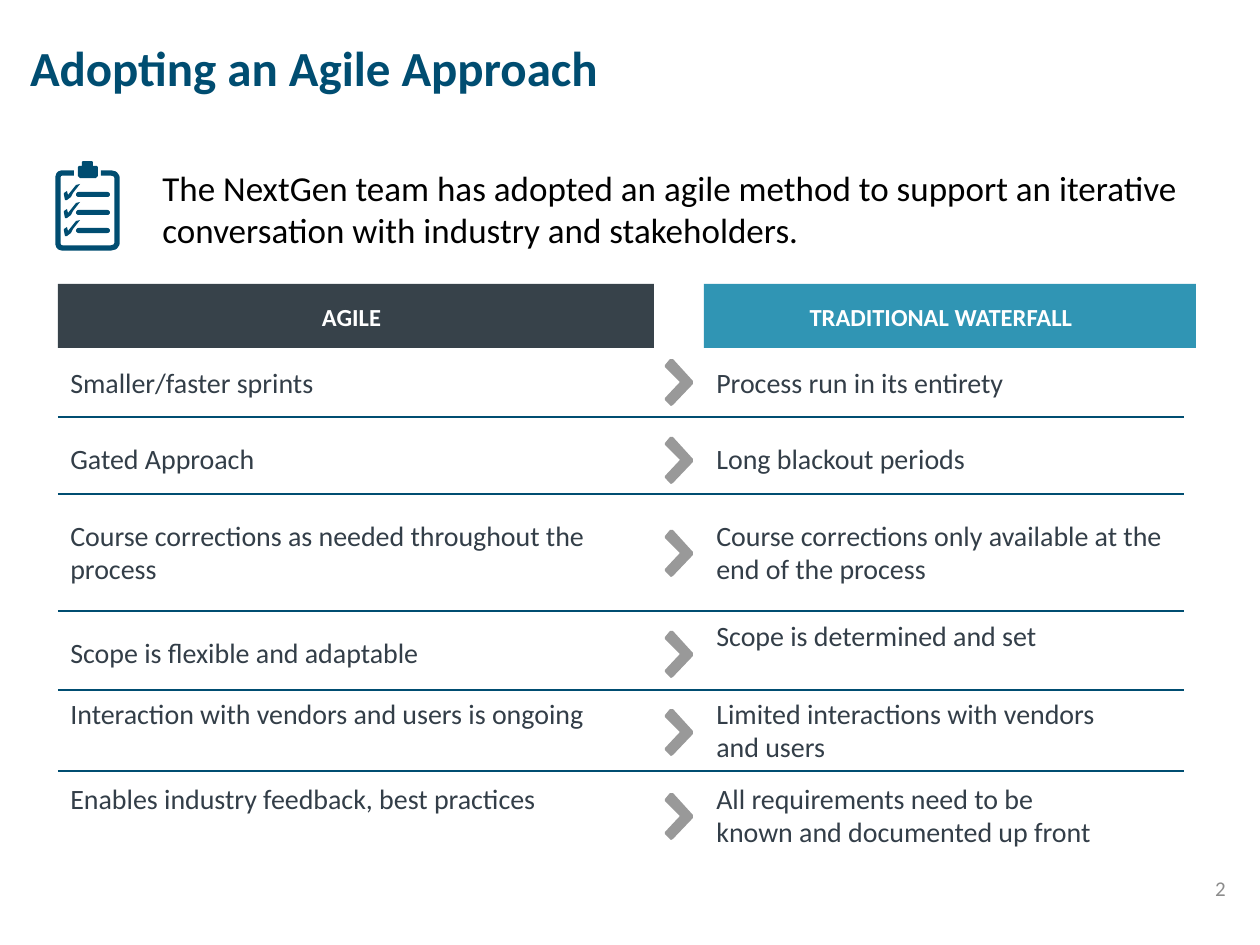
"""Build the slide that sets agile against waterfall."""
import pptx
import pptx.dml.color
import pptx.enum.shapes
import pptx.enum.text
import pptx.oxml.ns
import pptx.util
from lxml import etree

SCALE = 914400 / 126
NAVY, SLATE, TEAL, INK, GREY = "004D71", "37424A", "3095B4", "333E48", "999999"
SHAPE = pptx.enum.shapes.MSO_SHAPE
ALIGN = pptx.enum.text.PP_ALIGN
ANCHOR = pptx.enum.text.MSO_ANCHOR

ROWS = [
    ("Smaller/faster sprints", 359, "Process run in its entirety", 359, 359),
    ("Gated Approach", 435, "Long blackout periods", 435, 437),
    ("Course corrections as needed throughout the process", 512,
     "Course corrections only available at the end of the process", 512, 530),
    ("Scope is flexible and adaptable", 629, "Scope is determined and set", 612, 631),
    ("Interaction with vendors and users is ongoing", 690,
     "Limited interactions with vendors\vand users", 690, 709),
    ("Enables industry feedback, best practices", 775,
     "All requirements need to be\vknown and documented up front", 775, 793),
]
RULES = [417, 494, 611, 690, 771]
ARROW = [(7, 47), (1, 41), (1, 39), (16, 23), (1, 8), (1, 6), (6, 0),
         (9, 0), (29, 22), (29, 25), (9, 46)]
TICK = [(16, 0), (9, 9), (7, 13), (3, 16), (1, 16), (0, 11), (0, 9),
        (3, 7), (4, 11), (8, 6), (12, 1)]
BOARD = [(19, 3), (7, 3), (4, 4), (3, 7), (3, 74), (4, 77), (7, 78),
         (56, 78), (60, 77), (62, 74), (62, 7), (60, 4), (56, 3), (46, 3)]
CLIP = [(0, 6), (1, 5), (4, 5), (4, 1), (5, 0), (14, 0), (15, 1), (15, 5),
        (19, 5), (20, 6), (20, 15), (18, 17), (2, 17), (0, 15)]


def px(num):
    """Turn pixels into EMU."""
    return pptx.util.Emu(round(num * SCALE))


def tint(code):
    """Turn a hex string into a colour."""
    return pptx.dml.color.RGBColor.from_string(code)


def place(shape, left, top, width, height):
    """Set the bounds of a shape."""
    shape.left, shape.top = px(left), px(top)
    shape.width, shape.height = px(width), px(height)


def style(frame, size, color, bold=False, align=ALIGN.LEFT):
    """Format all text in a frame."""
    for para in frame.paragraphs:
        para.alignment = align
        for run in para.runs:
            font = run.font
            font.name, font.size, font.bold = "Calibri", pptx.util.Pt(size), bold
            font.color.rgb = tint(color)


def title(slide, text):
    """Move and format the title."""
    shape = slide.shapes.title
    place(shape, 30, 37, 748, 67)
    frame = shape.text_frame
    frame.text = text
    frame.vertical_anchor = ANCHOR.TOP
    frame.margin_left = frame.margin_right = 0
    frame.margin_top = frame.margin_bottom = 0
    style(frame, 28, NAVY, True)


def label(slide, text, box, size, color, bold=False, align=ALIGN.LEFT):
    """Add a wrapped text box."""
    frame = slide.shapes.add_textbox(*map(px, box)).text_frame
    frame.word_wrap = True
    frame.text = text
    style(frame, size, color, bold, align)
    return frame


def block(slide, kind, box, color):
    """Add a plain filled shape."""
    shape = slide.shapes.add_shape(kind, *map(px, box))
    shape.shadow.inherit = False
    shape.fill.solid()
    shape.fill.fore_color.rgb = tint(color)
    shape.line.fill.background()
    return shape


def outline(slide, points, left, top, color, stroke=0):
    """Add a filled outline, or an open one when it has a stroke."""
    spots = [(left + x, top + y) for x, y in points]
    pen = slide.shapes.build_freeform(*spots[0], scale=SCALE)
    pen.add_line_segments(spots[1:], close=not stroke)
    shape = pen.convert_to_shape()
    shape.shadow.inherit = False
    if stroke:
        shape.fill.background()
        shape.line.color.rgb = tint(color)
        shape.line.width = pptx.util.Pt(stroke)
    else:
        shape.fill.solid()
        shape.fill.fore_color.rgb = tint(color)
        shape.line.fill.background()


def rule(slide, y):
    """Add a line between two rows."""
    kind = pptx.enum.shapes.MSO_CONNECTOR.STRAIGHT
    line = slide.shapes.add_connector(kind, px(58), px(y), px(1184), px(y))
    line.line.color.rgb = tint(NAVY)
    line.line.width = pptx.util.Pt(0.75)
    etree.SubElement(line._element.spPr, pptx.oxml.ns.qn("a:effectLst"))


def icon(slide):
    """Draw the checklist."""
    outline(slide, BOARD, 55, 170, NAVY, 3)
    outline(slide, CLIP, 78, 161, NAVY)
    for step in range(3):
        drop = 18 * step
        bar = block(slide, SHAPE.ROUNDED_RECTANGLE, (76, 192 + drop, 34, 5), NAVY)
        bar.adjustments[0] = 0.5
        outline(slide, TICK, 64, 184 + drop, NAVY)


def header(slide, text, box, span, color):
    """Add a column header."""
    block(slide, SHAPE.RECTANGLE, box, color)
    label(slide, text, (*span, 40), 14, "FFFFFF", True, ALIGN.CENTER)


def main():
    """Build and save the slide."""
    deck = pptx.Presentation()
    deck.slide_width, deck.slide_height = px(1260), px(945)
    slide = deck.slides.add_slide(deck.slide_layouts[5])
    title(slide, "Adopting an Agile Approach")
    icon(slide)
    label(slide, "The NextGen team has adopted an agile method to support an iterative "
          "conversation with industry and stakeholders.", (150, 160, 1090, 97), 20, "000000")
    header(slide, "AGILE", (58, 284, 596, 64), (60, 296, 583), SLATE)
    header(slide, "TRADITIONAL WATERFALL", (704, 284, 492, 64), (704, 296, 474), TEAL)
    for left, ltop, right, rtop, atop in ROWS:
        label(slide, left, (58, ltop, 595, 47), 16, INK)
        label(slide, right, (704, rtop, 491, 47), 16, INK)
        outline(slide, ARROW, 664, atop, GREY)
    for y in RULES:
        rule(slide, y)
    number = label(slide, "2", (944, 863, 294, 50), 12, "8C8C8C", align=ALIGN.RIGHT)
    number.vertical_anchor = ANCHOR.MIDDLE
    deck.save("out.pptx")


if __name__ == "__main__":
    main()
